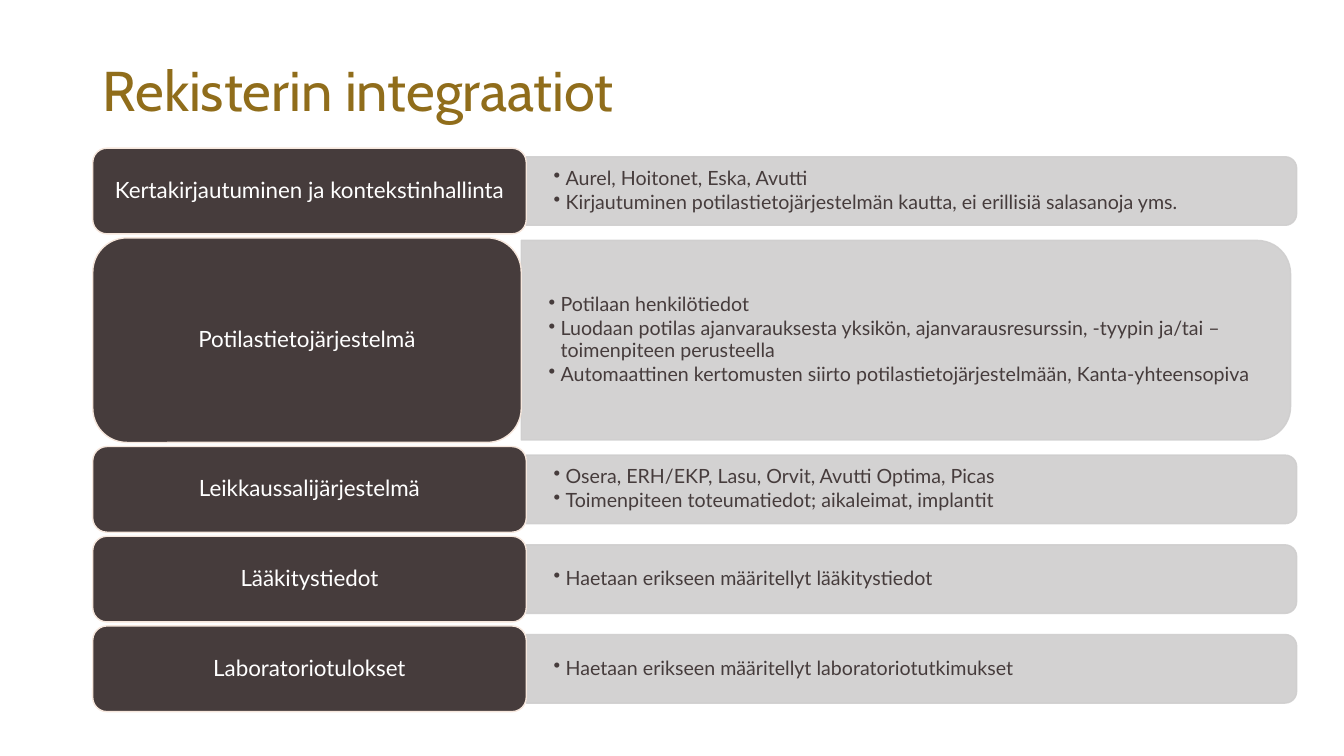
from lxml import etree
from pptx import Presentation
from pptx.dml.color import RGBColor
from pptx.enum.shapes import MSO_SHAPE
from pptx.enum.text import MSO_ANCHOR, PP_ALIGN
from pptx.oxml.ns import qn
from pptx.util import Inches, Pt

ROUNDED = MSO_SHAPE.ROUNDED_RECTANGLE
ROUNDED_TOP = MSO_SHAPE.ROUND_2_SAME_RECTANGLE
MIDDLE, BOTTOM = MSO_ANCHOR.MIDDLE, MSO_ANCHOR.BOTTOM
LEFT, CENTER = PP_ALIGN.LEFT, PP_ALIGN.CENTER

# Content
TITLE = "Rekisterin integraatiot"
# label, details, row height, label width, panel height, panel width
SMALL = (0.85, 4.3, 0.68, 7.64)
TALL = (2.03, 4.25, 1.98, 7.63)
INTEGRATIONS = [
    ("Kertakirjautuminen ja kontekstinhallinta",
     ["Aurel, Hoitonet, Eska, Avutti",
      "Kirjautuminen potilastietojärjestelmän kautta, ei erillisiä salasanoja yms."], SMALL),
    ("Potilastietojärjestelmä",
     ["Potilaan henkilötiedot",
      "Luodaan potilas ajanvarauksesta yksikön, ajanvarausresurssin, -tyypin ja/tai "
      "–toimenpiteen perusteella",
      "Automaattinen kertomusten siirto potilastietojärjestelmään, Kanta-yhteensopiva"], TALL),
    ("Leikkaussalijärjestelmä",
     ["Osera, ERH/EKP, Lasu, Orvit, Avutti Optima, Picas",
      "Toimenpiteen toteumatiedot; aikaleimat, implantit"], SMALL),
    ("Lääkitystiedot", ["Haetaan erikseen määritellyt lääkitystiedot"], SMALL),
    ("Laboratoriotulokset", ["Haetaan erikseen määritellyt laboratoriotutkimukset"], SMALL),
]

THEME = {
    "title": ("Cabin", 40, "906D1B"),
    "label": ("Lato", 16, "FFFFFF"),
    "detail": ("Lato", 14, "463C3C"),
    "label_fill": "463C3C", "label_line": "F6E7DD",
    "panel": "CFCECE", "panel_alpha": 90, "background": "FFFFFF",
}
ROWS_LEFT, ROWS_TOP, ROW_GAP = 0.92, 1.47, 0.04
CORNER_INSET = 0.05  # share of the short side taken by a rounded corner


def write(shape, lines, style, anchor, align, inset, bulleted=False):
    font_name, size, color = THEME[style]
    frame = shape.text_frame
    frame.word_wrap = True
    frame.vertical_anchor = anchor
    frame.margin_left = frame.margin_right = Inches(inset)
    frame.margin_top = frame.margin_bottom = Inches(0.05)
    for index, line in enumerate(lines):
        paragraph = frame.paragraphs[0] if index == 0 else frame.add_paragraph()
        paragraph.text = line
        paragraph.alignment = align
        paragraph.line_spacing = 0.9
        if bulleted:
            paragraph.space_after = Pt(2)
            properties = paragraph._p.get_or_add_pPr()
            properties.set("marL", str(Inches(0.12)))
            properties.set("indent", str(-Inches(0.12)))
            etree.SubElement(properties, qn("a:buChar")).set("char", "•")
        paragraph.font.name = font_name
        paragraph.font.size = Pt(size)
        paragraph.font.color.rgb = RGBColor.from_string(color)


def add_block(slide, kind, left, top, width, height, fill, line, alpha=None):
    block = slide.shapes.add_shape(kind, Inches(left), Inches(top), Inches(width), Inches(height))
    block.shadow.inherit = False
    block.fill.solid()
    block.fill.fore_color.rgb = RGBColor.from_string(fill)
    block.line.color.rgb = RGBColor.from_string(line)
    block.line.width = Pt(1)
    if alpha is not None:
        for color in block._element.spPr.iter(qn("a:srgbClr")):
            etree.SubElement(color, qn("a:alpha")).set("val", str(alpha * 1000))
    return block


def add_text(slide, left, top, width, height):
    return slide.shapes.add_textbox(Inches(left), Inches(top), Inches(width), Inches(height))


def add_integration(slide, top, label, details, sizes):
    row_height, label_width, panel_height, panel_width = sizes
    panel_left = ROWS_LEFT + label_width
    middle = top + row_height / 2

    # Detail panel: turned a quarter so its rounded corners face right
    center = panel_left + panel_width / 2
    panel = add_block(slide, ROUNDED_TOP, center - panel_height / 2, middle - panel_width / 2,
                      panel_height, panel_width, THEME["panel"], THEME["panel"],
                      THEME["panel_alpha"])
    panel.rotation = 90
    details_box = add_text(slide, panel_left, middle - panel_height / 2,
                           panel_width - CORNER_INSET * panel_height, panel_height)
    write(details_box, details, "detail", MIDDLE, LEFT, 0.27, bulleted=True)

    # Label
    label_box = add_block(slide, ROUNDED, ROWS_LEFT, top, label_width, row_height,
                          THEME["label_fill"], THEME["label_line"])
    write(label_box, [label], "label", MIDDLE, CENTER, 0.07)


def main():
    deck = Presentation()
    deck.slide_width, deck.slide_height = Inches(13.33), Inches(7.5)
    slide = deck.slides.add_slide(deck.slide_layouts[6])
    slide.background.fill.solid()
    slide.background.fill.fore_color.rgb = RGBColor.from_string(THEME["background"])

    # Title
    write(add_text(slide, 0.92, 0.29, 10.15, 0.99), [TITLE], "title", BOTTOM, LEFT, 0.1)

    # Integration rows
    top = ROWS_TOP
    for label, details, sizes in INTEGRATIONS:
        add_integration(slide, top, label, details, sizes)
        top += sizes[0] + ROW_GAP

    deck.save("out.pptx")


if __name__ == "__main__":
    main()
